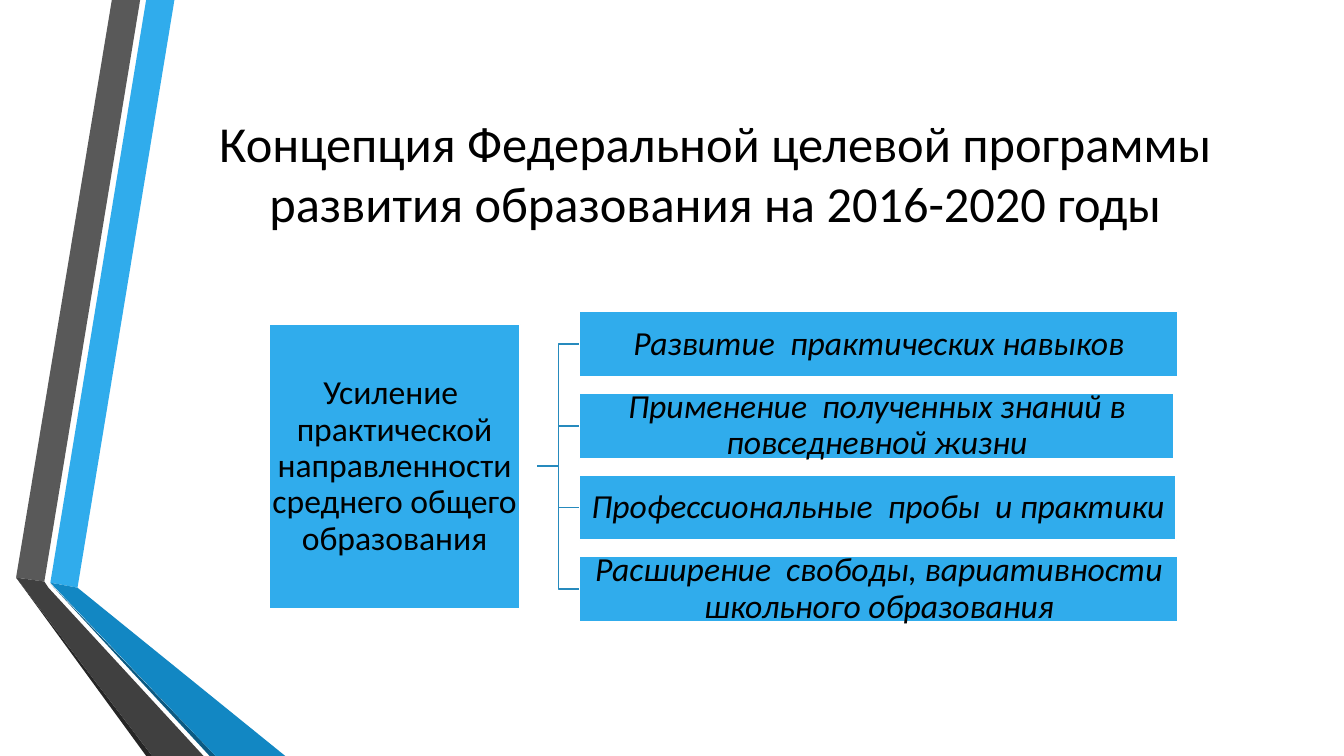
import pptx
import pptx.util
import pptx.dml.color
import pptx.enum.shapes
import pptx.enum.text
import pptx.oxml
import pptx.oxml.ns
from dataclasses import dataclass

Pt = pptx.util.Pt

# Content
TITLE = "Концепция Федеральной целевой программы развития образования на 2016-2020 годы"
ROOT = "Усиление  практической направленности среднего общего образования"
GOALS = [  # text, box width
    ("Развитие  практических навыков", 427.7),
    ("Применение  полученных знаний в повседневной жизни", 424.8),
    ("Профессиональные  пробы  и практики", 426.2),
    ("Расширение  свободы, вариативности школьного образования", 427.7),
]


@dataclass
class Theme:
    font: str = "Calibri"
    head: int = 36
    body: int = 24
    edge: float = 1.25
    ink: str = "000000"
    white: str = "FFFFFF"
    blue: str = "30ACEC"
    line: str = "268ABD"
    grey: str = "595959"
    black: str = "262626"
    navy: str = "0C5A82"
    deep: str = "1287C3"
    coal: str = "404040"


theme = Theme()

RIBBONS = [  # colour, corners
    (theme.blue, [(36, 416.2), (55.4, 419.8), (124.6, 0), (104.4, 0)]),
    (theme.grey, [(100.1, 0), (79.9, 0), (11.5, 412.6), (31.7, 415.4)]),
    (theme.black, [(11.5, 412.6), (104.4, 540), (108.7, 540)]),
    (theme.navy, [(36, 416.9), (149.8, 540), (154.1, 540)]),
    (theme.deep, [(36, 416.2), (154.1, 540), (203.8, 540), (55.4, 419.8)]),
    (theme.coal, [(145.4, 540), (34.6, 419.8), (31.7, 415.4),
                  (11.5, 412.6), (108.7, 540)]),
]

# Layout of the tree
ROOT_BOX = (192.2, 231.8, 179.3, 203)
GOAL_LEFT, GOAL_TOP, GOAL_STEP, GOAL_HIGH = 414, 222.5, 58.3, 46.8
STEM_LEFT, STEM_Y = 383.8, 333


def rgb(code):
    return pptx.dml.color.RGBColor.from_string(code)


def paint(shape, code):
    shape.shadow.inherit = False
    shape.fill.solid()
    shape.fill.fore_color.rgb = rgb(code)


def write(frame, text, size, slant=False):
    frame.word_wrap = True
    frame.auto_size = pptx.enum.text.MSO_AUTO_SIZE.NONE
    frame.vertical_anchor = pptx.enum.text.MSO_ANCHOR.MIDDLE
    para = frame.paragraphs[0]
    para.alignment = pptx.enum.text.PP_ALIGN.CENTER
    run = para.add_run()
    run.text = text
    run.font.name = theme.font
    run.font.size = Pt(size)
    run.font.italic = slant
    run.font.color.rgb = rgb(theme.ink)
    return para


def add_ribbon(slide, code, spots):
    first, *rest = [(Pt(x), Pt(y)) for x, y in spots]
    pen = slide.shapes.build_freeform(*first)
    pen.add_line_segments(rest, close=True)
    shape = pen.convert_to_shape()
    paint(shape, code)
    shape.line.fill.background()


def add_box(slide, place, text, slant=False):
    kind = pptx.enum.shapes.MSO_SHAPE.RECTANGLE
    box = slide.shapes.add_shape(kind, *map(Pt, place))
    paint(box, theme.blue)
    box.line.color.rgb = rgb(theme.white)
    box.line.width = Pt(theme.edge)
    frame = box.text_frame
    frame.margin_left = frame.margin_right = Pt(1.2)
    frame.margin_top = frame.margin_bottom = Pt(1.2)
    write(frame, text, theme.body, slant).line_spacing = 0.9


def add_branch(slide, end):
    kind = pptx.enum.shapes.MSO_CONNECTOR.ELBOW
    link = slide.shapes.add_connector(
        kind, Pt(STEM_LEFT), Pt(STEM_Y), Pt(GOAL_LEFT), Pt(end))
    link.line.color.rgb = rgb(theme.line)
    link.line.width = Pt(theme.edge)
    plain = pptx.oxml.ns.qn("a:effectLst")
    props = link.element.spPr
    props.append(props.makeelement(plain, {}))


def main():
    deck = pptx.Presentation()
    deck.slide_width, deck.slide_height = Pt(960), Pt(540)
    slide = deck.slides.add_slide(deck.slide_layouts[5])

    # Side ribbons
    for code, spots in RIBBONS:
        add_ribbon(slide, code, spots)

    # Title
    title = slide.shapes.title
    title.left, title.top = Pt(116.6), Pt(54)
    title.width, title.height = Pt(789.1), Pt(138.2)
    write(title.text_frame, TITLE, theme.head)

    # Branches, then boxes above them
    tops = [GOAL_TOP + i * GOAL_STEP for i in range(len(GOALS))]
    for top in tops:
        add_branch(slide, top + GOAL_HIGH / 2)
    add_box(slide, ROOT_BOX, ROOT)
    for top, (text, width) in zip(tops, GOALS):
        add_box(slide, (GOAL_LEFT, top, width, GOAL_HIGH), text, True)

    deck.save("out.pptx")


if __name__ == "__main__":
    main()
